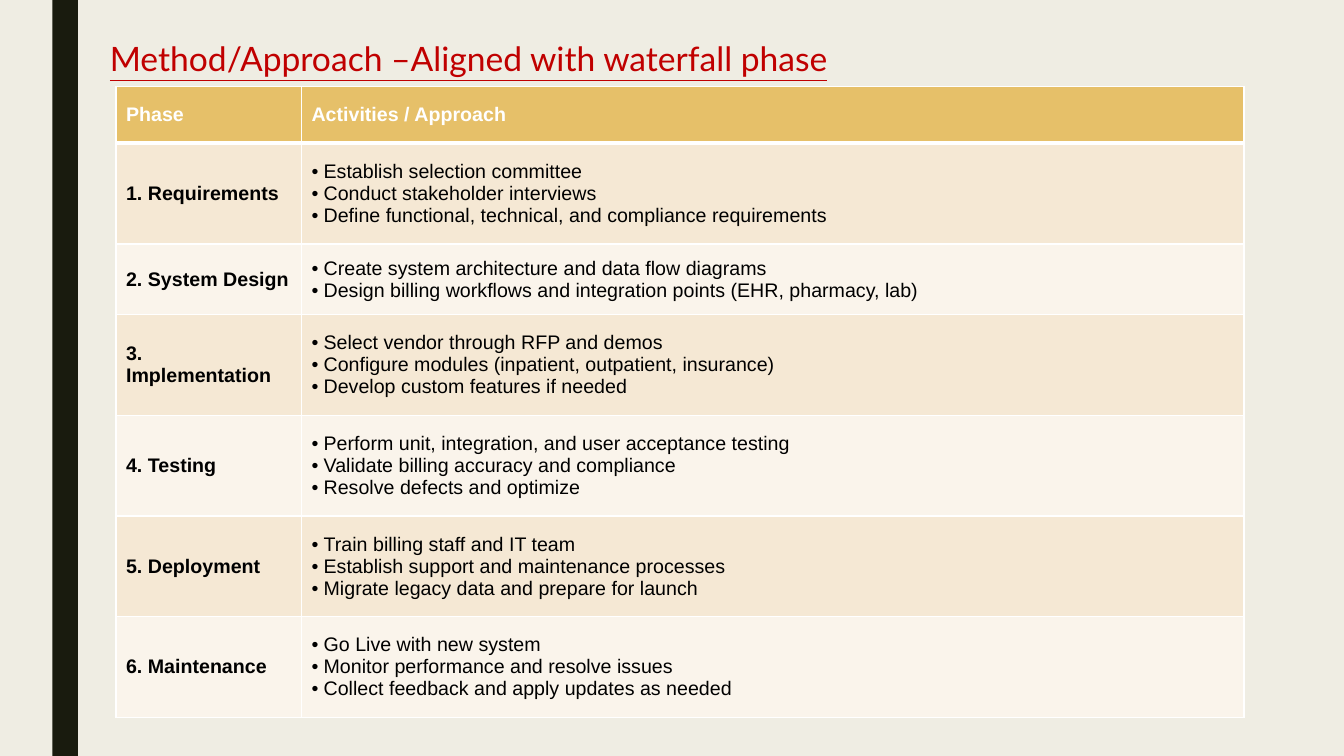
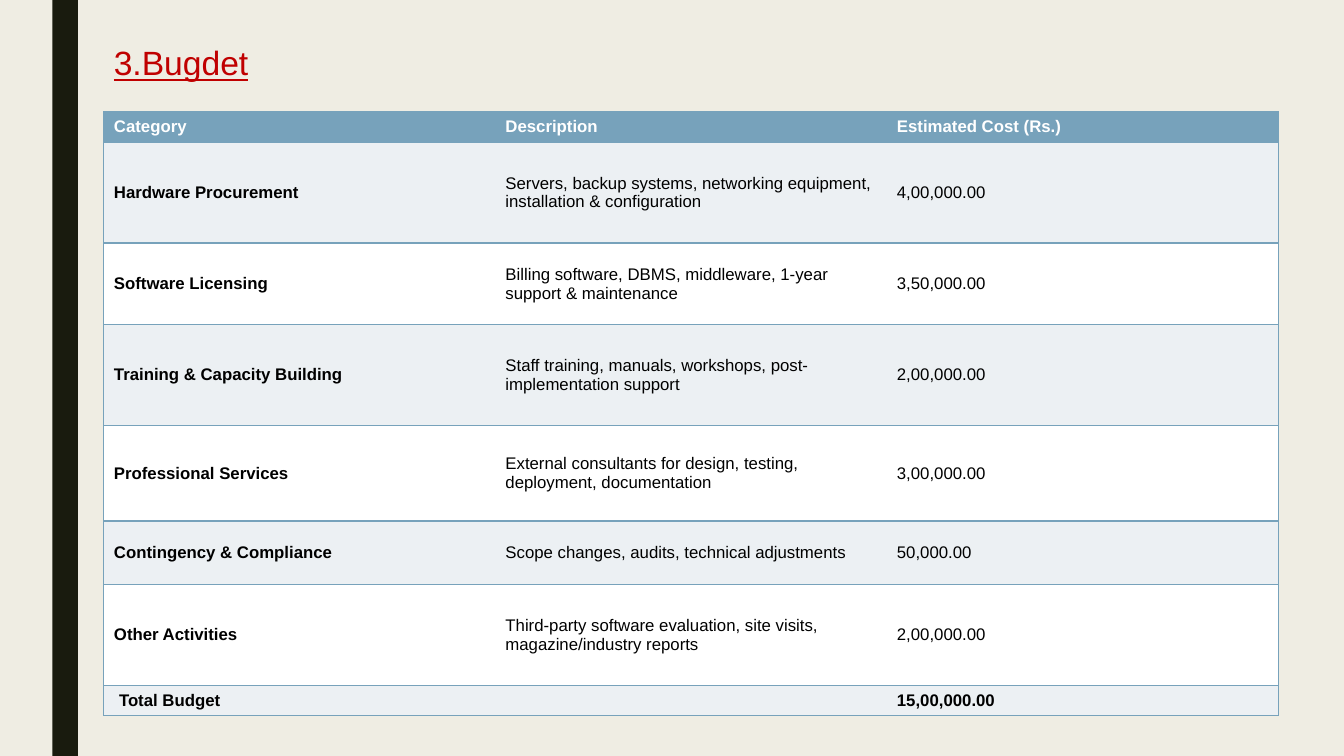
from lxml.etree import SubElement
from pptx import Presentation
from pptx.dml.color import RGBColor
from pptx.enum.shapes import MSO_SHAPE
from pptx.enum.text import MSO_ANCHOR
from pptx.oxml.ns import qn
from pptx.util import Inches, Pt

PAPER, BAND, TITLE = "EFEDE3", "191B0E", "C00000"
WHITE, BLACK, STEEL = "FFFFFF", "000000", "77A2BB"
BULLET_INDENT = Inches(0.12)

METHOD_ROWS = [
    ["Phase", "Activities / Approach"],
    ["1. Requirements", [
        "Establish selection committee",
        "Conduct stakeholder interviews",
        "Define functional, technical, and compliance requirements"]],
    ["2. System Design", [
        "Create system architecture and data flow diagrams",
        "Design billing workflows and integration points (EHR, pharmacy, lab)"]],
    ["3. Implementation", [
        "Select vendor through RFP and demos",
        "Configure modules (inpatient, outpatient, insurance)",
        "Develop custom features if needed"]],
    ["4. Testing", [
        "Perform unit, integration, and user acceptance testing",
        "Validate billing accuracy and compliance",
        "Resolve defects and optimize"]],
    ["5. Deployment", [
        "Train billing staff and IT team",
        "Establish support and maintenance processes",
        "Migrate legacy data and prepare for launch"]],
    ["6. Maintenance", [
        "Go Live with new system",
        "Monitor performance and resolve issues",
        "Collect feedback and apply updates as needed"]],
]

BUDGET_ROWS = [
    ["Category", "Description", "Estimated Cost (Rs.)"],
    ["Hardware Procurement",
     "Servers, backup systems, networking equipment, installation & configuration",
     "4,00,000.00"],
    ["Software Licensing",
     "Billing software, DBMS, middleware, 1-year support & maintenance",
     "3,50,000.00"],
    ["Training & Capacity Building",
     "Staff training, manuals, workshops, post-implementation support",
     "2,00,000.00"],
    ["Professional Services",
     "External consultants for design, testing, deployment, documentation",
     "3,00,000.00"],
    ["Contingency & Compliance",
     "Scope changes, audits, technical adjustments",
     "50,000.00"],
    ["Other Activities",
     "Third-party software evaluation, site visits, magazine/industry reports",
     "2,00,000.00"],
    ["Total Budget", "", "15,00,000.00"],
]

SLIDES = [
    {"title": "Method/Approach –Aligned with waterfall phase", "font": "Lato",
     "title_at": (7.43, 5.07), "table_at": (8.63, 11.47),
     "columns": [13.8, 70.13], "rows": [7.47, 13.33, 9.33] + [13.33] * 4,
     "cells": METHOD_ROWS, "size": 14, "header": "E6C069",
     "stripes": ["F5E8D4", "FAF4EB"], "line": WHITE,
     "header_rule": 3, "inner_columns": True, "total": False},
    {"title": "3.Bugdet", "font": "Arial",
     "title_at": (7.73, 5.6), "table_at": (7.73, 14.8),
     "columns": [29.13] * 3,
     "rows": [4, 13.33, 10.8, 13.33, 12.67, 8.4, 13.33, 4],
     "cells": BUDGET_ROWS, "size": 12, "header": STEEL,
     "stripes": ["ECF0F3", WHITE], "line": STEEL,
     "header_rule": 1, "inner_columns": False, "total": True},
]


def paint(target, color):
    target.solid()
    target.fore_color.rgb = RGBColor.from_string(color)


def add_border(cell, side, color, width):
    line = SubElement(cell._tc.get_or_add_tcPr(), qn(f"a:ln{side}"), w=str(Pt(width)))
    if color:
        fill = SubElement(line, qn("a:solidFill"))
        SubElement(fill, qn("a:srgbClr"), val=color)
    else:
        SubElement(line, qn("a:noFill"))


deck = Presentation()
deck.slide_width, deck.slide_height = Inches(13.33), Inches(7.5)
column, row = deck.slide_width / 100, deck.slide_height / 100
paint(deck.slide_master.background.fill, PAPER)

for plan in SLIDES:
    page = deck.slides.add_slide(deck.slide_layouts[6])

    band = page.shapes.add_shape(
        MSO_SHAPE.RECTANGLE, int(3.9 * column), 0, int(1.9 * column), deck.slide_height)
    band.shadow.inherit = False
    paint(band.fill, BAND)
    band.line.fill.background()

    left, top = plan["title_at"]
    box = page.shapes.add_textbox(
        int(left * column), int(top * row), int(80 * column), int(6 * row))
    box.text_frame.word_wrap = True
    para = box.text_frame.paragraphs[0]
    para.line_spacing = 0.89
    span = para.add_run()
    span.text = plan["title"]
    span.font.name, span.font.size, span.font.underline = plan["font"], Pt(24), True
    paint(span.font.fill, TITLE)

    left, top = plan["table_at"]
    last_row, last_column = len(plan["rows"]) - 1, len(plan["columns"]) - 1
    table = page.shapes.add_table(
        last_row + 1, last_column + 1, int(left * column), int(top * row),
        int(sum(plan["columns"]) * column), int(sum(plan["rows"]) * row)).table
    table.first_row = table.horz_banding = False
    for index, width in enumerate(plan["columns"]):
        table.columns[index].width = int(width * column)
    for index, height in enumerate(plan["rows"]):
        table.rows[index].height = int(height * row)

    for r, entries in enumerate(plan["cells"]):
        is_header, is_total = r == 0, plan["total"] and r == last_row
        for c, entry in enumerate(entries):
            cell = table.cell(r, c)
            cell.vertical_anchor = MSO_ANCHOR.MIDDLE
            if is_total and c == 0:
                cell.margin_left = Inches(0.15)

            inner = plan["line"] if plan["inner_columns"] else None
            add_border(cell, "L", plan["line"] if c == 0 else inner, 1)
            add_border(cell, "R", plan["line"] if c == last_column else inner, 1)
            add_border(cell, "T", plan["line"], plan["header_rule"] if r == 1 else 1)
            add_border(cell, "B", plan["line"], plan["header_rule"] if is_header else 1)
            paint(cell.fill, plan["header"] if is_header else plan["stripes"][(r - 1) % 2])

            bulleted = isinstance(entry, list)
            for index, text in enumerate(entry if bulleted else [entry]):
                frame = cell.text_frame
                para = frame.add_paragraph() if index else frame.paragraphs[0]
                if bulleted:
                    properties = para._p.get_or_add_pPr()
                    properties.set("marL", str(BULLET_INDENT))
                    properties.set("indent", str(-BULLET_INDENT))
                    SubElement(properties, qn("a:buFont"), typeface="Arial")
                    SubElement(properties, qn("a:buChar"), char="•")
                if not text:
                    SubElement(para._p, qn("a:endParaRPr"), sz=str(plan["size"] * 100))
                    continue
                span = para.add_run()
                span.text = text
                span.font.name, span.font.size = "Arial", Pt(plan["size"])
                span.font.bold = is_header or is_total or c == 0
                paint(span.font.fill, WHITE if is_header else BLACK)

deck.save("out.pptx")
